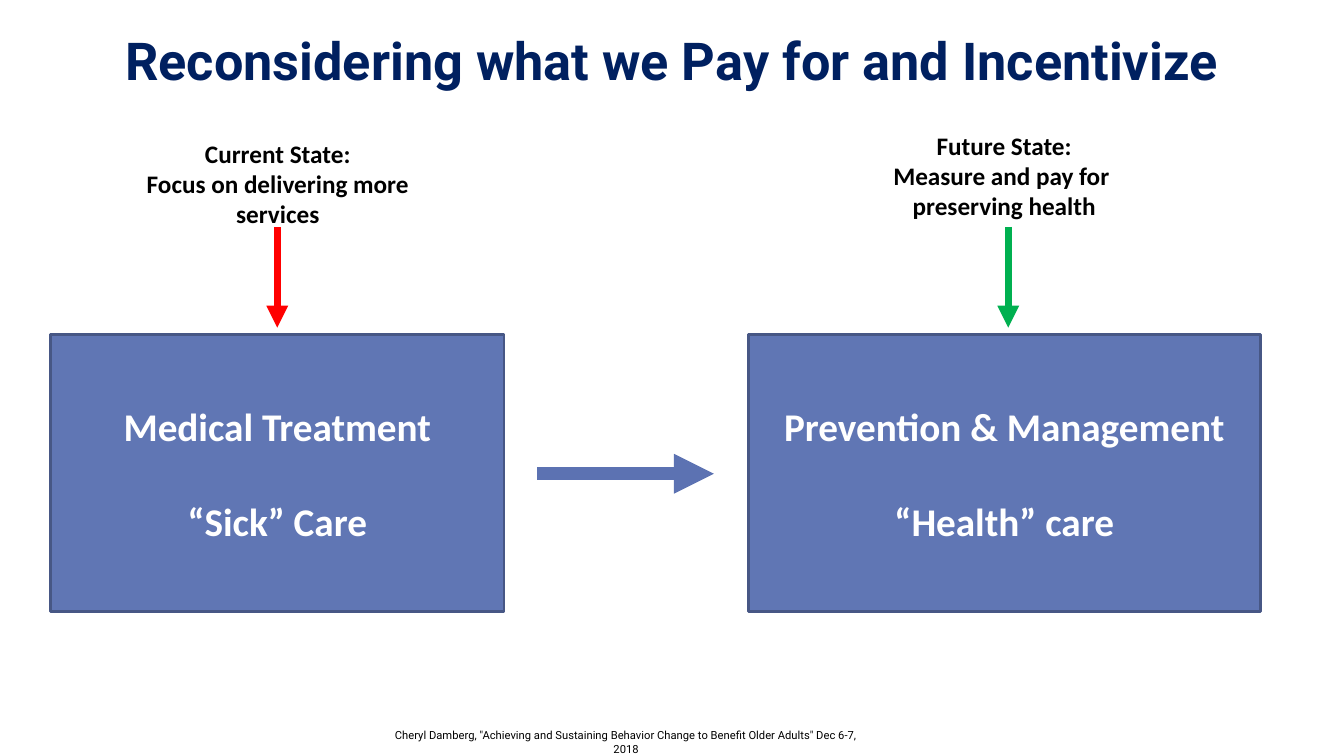
from lxml import etree
from pptx import Presentation
from pptx.dml.color import RGBColor
from pptx.enum.shapes import MSO_CONNECTOR, MSO_SHAPE
from pptx.enum.text import MSO_ANCHOR, MSO_AUTO_SIZE, PP_ALIGN
from pptx.oxml.ns import qn
from pptx.util import Inches, Pt

CENTER, TOP, MIDDLE = PP_ALIGN.CENTER, MSO_ANCHOR.TOP, MSO_ANCHOR.MIDDLE
STRAIGHT, RECTANGLE, NO_FIT = MSO_CONNECTOR.STRAIGHT, MSO_SHAPE.RECTANGLE, MSO_AUTO_SIZE.NONE

WIDTH, HEIGHT = 13.33, 7.5
BOX_TOP, BOX_HEIGHT = 3.32, 2.75
ARROW_TOP, ARROW_BOTTOM = 2.25, 3.25
CAPTION_HEIGHT = 1.01
BOX_FILL, BOX_LINE = "6076B4", "475785"

TITLE = "Reconsidering what we Pay for and Incentivize"
SOURCE = ('Cheryl Damberg, "Achieving and Sustaining Behavior Change '
          'to Benefit Older Adults" Dec 6-7, 2018')
STATES = [
    {"caption": ["Current State:", "Focus on delivering more services"],
     "caption_at": (1.17, 1.32, 3.17),
     "care": ["Medical Treatment", "“Sick” Care"],
     "box_left": 0.5, "box_width": 4.5, "arrow_x": 2.75, "arrow_color": "FF0000"},
    {"caption": ["Future State:", "Measure and pay for \vpreserving health"],
     "caption_at": (7.92, 1.24, 4.08),
     "care": ["Prevention & Management", "“Health” care"],
     "box_left": 7.42, "box_width": 5.08, "arrow_x": 10, "arrow_color": "00B050"},
]
TRANSITION = {"start": (5.33, 4.7), "end": (7.08, 4.7), "color": "5C72B2", "width": 9.5}

TITLE_FONT = {"name": "Roboto", "size": Pt(37.3), "bold": True}
CARE_FONT = {"name": "Calibri", "size": Pt(28), "bold": True}
CAPTION_FONT = {"name": "Calibri", "size": Pt(18), "bold": True}
SOURCE_FONT = {"name": "Roboto", "size": Pt(8), "bold": False}


def rgb(value):
    return RGBColor.from_string(value)


def inches(*values):
    return [Inches(value) for value in values]


def write(shape, lines, font, color, anchor=TOP, gap=0):
    """Fill a shape with centred paragraphs, gap points apart."""
    frame = shape.text_frame
    frame.word_wrap, frame.auto_size, frame.vertical_anchor = True, NO_FIT, anchor
    for index, line in enumerate(lines):
        para = frame.add_paragraph() if index else frame.paragraphs[0]
        para.text, para.alignment = line, CENTER
        para.space_before = Pt(gap if index else 0)
        for span in para.runs:
            for name, value in font.items():
                setattr(span.font, name, value)
            span.font.color.rgb = rgb(color)


def add_arrow(slide, start, end, color, width):
    arrow = slide.shapes.add_connector(STRAIGHT, *inches(*start, *end))
    arrow.line.color.rgb, arrow.line.width = rgb(color), Pt(width)
    outline = arrow.line._get_or_add_ln()
    etree.SubElement(outline, qn("a:tailEnd"), type="triangle")
    etree.SubElement(outline.getparent(), qn("a:effectLst"))


def add_text(slide, at, lines, font):
    box = slide.shapes.add_textbox(*inches(*at))
    write(box, lines, font, "000000")


def add_title(slide):
    title = slide.shapes.title
    title.left, title.top, title.width, title.height = inches(0, 0.25, WIDTH, 1.08)
    write(title, [TITLE], TITLE_FONT, "002060")
    frame = title.text_frame
    frame.margin_left = frame.margin_top = frame.margin_right = Inches(0.1)
    frame.margin_bottom = Inches(0.2)
    frame.paragraphs[0].line_spacing = 0.9


def add_state(slide, state):
    box = slide.shapes.add_shape(
        RECTANGLE, *inches(state["box_left"], BOX_TOP, state["box_width"], BOX_HEIGHT))
    box.shadow.inherit = False
    box.fill.solid()
    box.fill.fore_color.rgb = rgb(BOX_FILL)
    box.line.color.rgb, box.line.width = rgb(BOX_LINE), Pt(2)
    write(box, state["care"], CARE_FONT, "FFFFFF", MIDDLE, gap=34)
    x = state["arrow_x"]
    add_arrow(slide, (x, ARROW_TOP), (x, ARROW_BOTTOM), state["arrow_color"], 5.25)
    add_text(slide, (*state["caption_at"], CAPTION_HEIGHT), state["caption"], CAPTION_FONT)


def main():
    deck = Presentation()
    deck.slide_width, deck.slide_height = inches(WIDTH, HEIGHT)
    slide = deck.slides.add_slide(deck.slide_layouts[5])
    add_title(slide)
    for state in STATES:
        add_state(slide, state)
    add_arrow(slide, **TRANSITION)
    add_text(slide, (3.75, 7.18, 4.92, 0.24), [SOURCE], SOURCE_FONT)
    deck.save("out.pptx")


if __name__ == "__main__":
    main()
